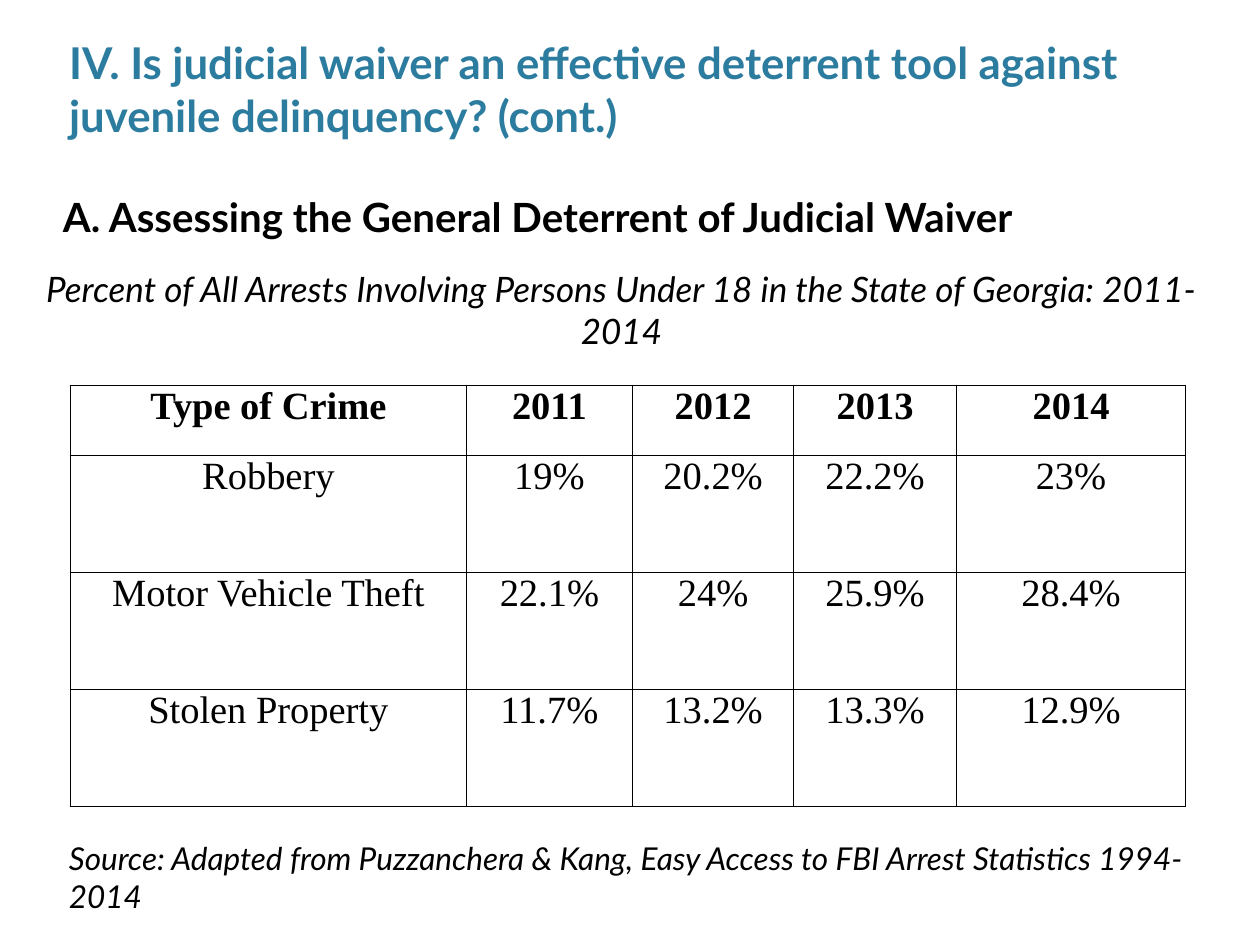
from lxml import etree
from pptx import Presentation
from pptx.dml.color import RGBColor
from pptx.enum import text
from pptx.oxml import ns
from pptx.util import Cm, Pt

BLACK = "000000"


def style(p, font, size, color=BLACK, bold=False, italic=False, align=text.PP_ALIGN.LEFT):
    p.alignment = align
    for r in p.runs:
        f = r.font
        f.name, f.size, f.bold, f.italic = font, Pt(size), bold, italic
        f.color.rgb = RGBColor.from_string(color)


def add_borders(cell, color=BLACK, width=Pt(1)):
    tcPr = cell._tc.get_or_add_tcPr()
    for i, side in enumerate(("lnL", "lnR", "lnT", "lnB")):
        ln = etree.Element(ns.qn("a:" + side), w=str(width))
        fill = etree.SubElement(ln, ns.qn("a:solidFill"))
        etree.SubElement(fill, ns.qn("a:srgbClr"), val=color)
        tcPr.insert(i, ln)


prs = Presentation()
prs.slide_width, prs.slide_height = Cm(25.4), Cm(19.05)
s = prs.slides.add_slide(prs.slide_layouts[5])

# Title
title = s.shapes.title
title.left, title.top, title.width, title.height = Cm(1.14), Cm(0.43), Cm(23.01), Cm(2.54)
tf = title.text_frame
tf.text = "IV. Is judicial waiver an effective deterrent tool against juvenile delinquency? (cont.)"
tf.word_wrap = True
tf.auto_size = text.MSO_AUTO_SIZE.NONE
tf.vertical_anchor = text.MSO_ANCHOR.BOTTOM
style(tf.paragraphs[0], "Lato", 25, "2C7C9F", bold=True)

# Arrest table
rows = [
    ("Type of Crime", "2011", "2012", "2013", "2014"),
    ("Robbery", "19%", "20.2%", "22.2%", "23%"),
    ("Motor Vehicle Theft", "22.1%", "24%", "25.9%", "28.4%"),
    ("Stolen Property", "11.7%", "13.2%", "13.3%", "12.9%"),
]
col_widths = [7.98, 3.35, 3.25, 3.28, 4.62]
row_heights = [1.41, 2.36, 2.36, 2.36]
table = s.shapes.add_table(len(rows), len(col_widths), Cm(1.42), Cm(7.77),
                           Cm(sum(col_widths)), Cm(sum(row_heights))).table
table.horz_banding = False
for col, width in zip(table.columns, col_widths):
    col.width = Cm(width)
for i, (values, height) in enumerate(zip(rows, row_heights)):
    table.rows[i].height = Cm(height)
    for j, value in enumerate(values):
        cell = table.cell(i, j)
        cell.text = value
        cell.margin_left = cell.margin_right = Cm(0.18)
        cell.margin_top = cell.margin_bottom = 0
        cell.fill.background()
        add_borders(cell)
        style(cell.text_frame.paragraphs[0], "Times New Roman", 22,
              bold=i == 0, align=text.PP_ALIGN.CENTER)

# Heading, table caption and source line: text, box in cm, size, format
captions = [
    ("A. Assessing the General Deterrent of Judicial Waiver",
     (1.02, 3.76, 22.89, 1.24), 23, {"bold": True}),
    ("Percent of All Arrests Involving Persons Under 18 in the State of Georgia: 2011-2014",
     (0.48, 5.26, 24.1, 1.96), 20, {"italic": True, "align": text.PP_ALIGN.CENTER}),
    ("Source: Adapted from Puzzanchera & Kang, Easy Access to FBI Arrest Statistics 1994-2014",
     (1.14, 16.79, 23.01, 1.8), 18, {"italic": True}),
]
for caption, box, size, fmt in captions:
    tf = s.shapes.add_textbox(*map(Cm, box)).text_frame
    tf.text = caption
    tf.word_wrap = True
    tf.auto_size = text.MSO_AUTO_SIZE.SHAPE_TO_FIT_TEXT
    style(tf.paragraphs[0], "Lato", size, **fmt)

prs.save("out.pptx")
